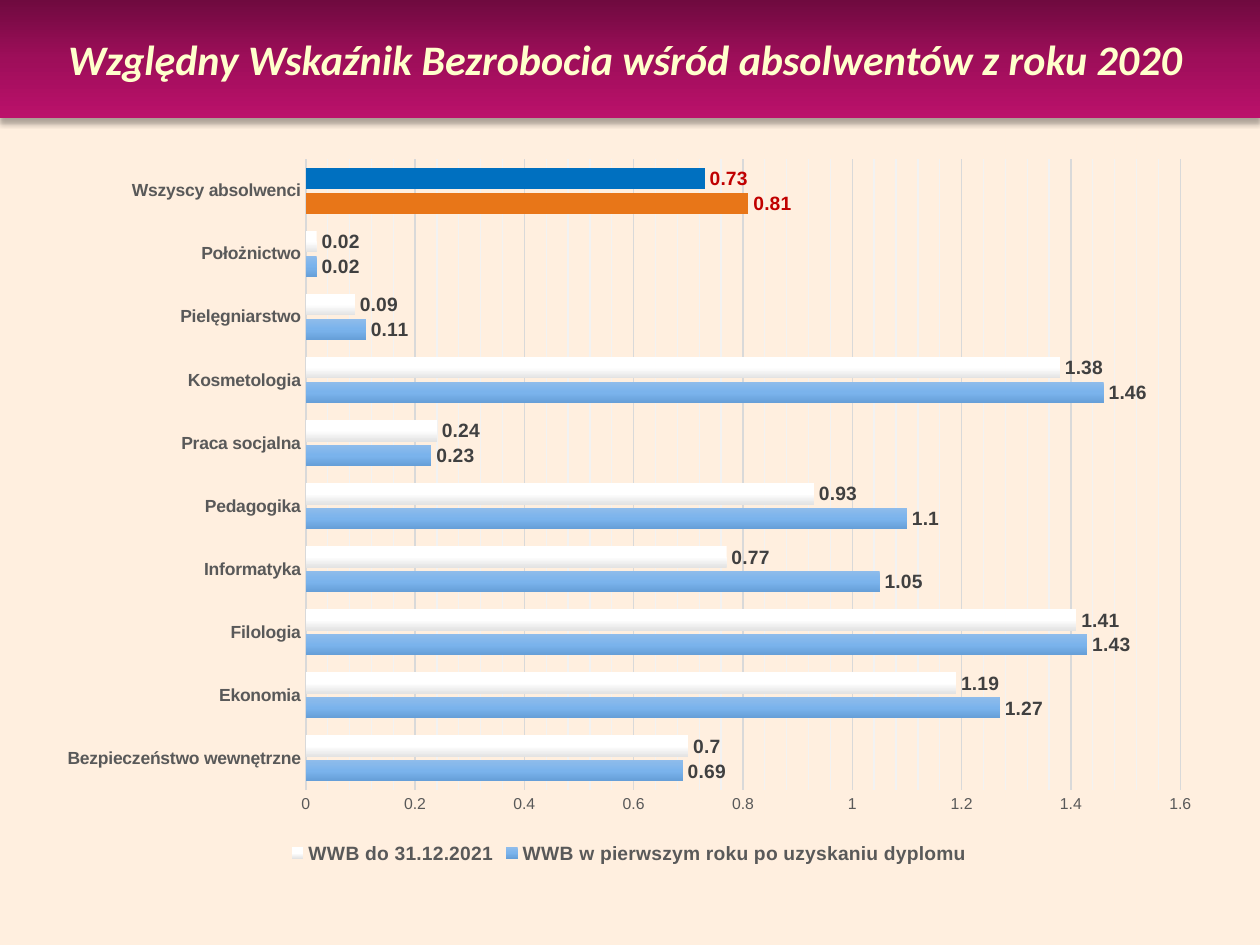
import copy

import pptx
import pptx.chart.data
import pptx.dml.color
import pptx.enum.chart
import pptx.enum.shapes
import pptx.enum.text
import pptx.oxml
import pptx.oxml.ns
import pptx.util
from pptx.util import Inches

COLORS = {
    "background": "FFEFDF",
    "title": "FFFFCC",
    "text": "595959",
    "label": "404040",
    "highlight": "C00000",
    "line": "D9D9D9",
    "minor line": "F2F2F2",
}
BANNER_GRADIENT = ("6F0A3F", "9E0E5A", "BB116B")
CATEGORIES = (
    "Bezpieczeństwo wewnętrzne", "Ekonomia", "Filologia", "Informatyka", "Pedagogika",
    "Praca socjalna", "Kosmetologia", "Pielęgniarstwo", "Położnictwo", "Wszyscy absolwenci",
)
SERIES = (
    ("WWB w pierwszym roku po uzyskaniu dyplomu",
     (0.69, 1.27, 1.43, 1.05, 1.1, 0.23, 1.46, 0.11, 0.02, 0.81),
     ("8FBCEB", "7AB3EC", "669FD8"), "E87618"),
    ("WWB do 31.12.2021",
     (0.7, 1.19, 1.41, 0.77, 0.93, 0.24, 1.38, 0.09, 0.02, 0.73),
     ("FFFFFF", "FFFFFF", "E3E3E3"), "0070C0"),
)


def rgb(value):
    return pptx.dml.color.RGBColor.from_string(value)


class SlideBuilder:
    """Holds the slide and its style, and adds each kind of element."""

    def __init__(self, slide):
        self.slide = slide
        self.colors = COLORS
        fill = slide.background.fill
        fill.solid()
        fill.fore_color.rgb = rgb(self.colors["background"])

    def set_font(self, font, size, color, name="Arial", bold=False, italic=False):
        font.name = name
        font.size = pptx.util.Pt(size)
        font.bold = bold
        font.italic = italic
        font.color.rgb = rgb(self.colors[color])

    def set_line(self, line, color, width):
        line.color.rgb = rgb(self.colors[color])
        line.width = pptx.util.Pt(width)

    def set_gradient(self, fill, element, colors):
        fill.gradient()
        fill.gradient_angle = 270
        stop_list = element.find(".//" + pptx.oxml.ns.qn("a:gsLst"))
        stop_list.insert(1, copy.deepcopy(stop_list[0]))
        for stop, color, position in zip(fill.gradient_stops, colors, (0, 0.5, 1)):
            stop.color.rgb = rgb(color)
            stop.position = position

    def add_banner(self, text, left, top, width, height):
        shape = self.slide.shapes.add_shape(
            pptx.enum.shapes.MSO_SHAPE.RECTANGLE, left, top, width, height)
        self.set_gradient(shape.fill, shape._element.spPr, BANNER_GRADIENT)
        shape.line.fill.background()
        shape.shadow.inherit = False
        effects = shape._element.spPr.find(pptx.oxml.ns.qn("a:effectLst"))
        effects.append(pptx.oxml.parse_xml(
            f'<a:outerShdw {pptx.oxml.ns.nsdecls("a")} blurRad="{pptx.util.Pt(3.5)}" '
            f'dist="{pptx.util.Pt(2.2)}" dir="5400000" rotWithShape="0">'
            '<a:srgbClr val="000000"><a:alpha val="32000"/></a:srgbClr></a:outerShdw>'))
        text_frame = shape.text_frame
        text_frame.word_wrap = True
        text_frame.vertical_anchor = pptx.enum.text.MSO_ANCHOR.MIDDLE
        text_frame.text = text
        paragraph = text_frame.paragraphs[0]
        paragraph.alignment = pptx.enum.text.PP_ALIGN.CENTER
        self.set_font(paragraph.runs[0].font, 24, "title", "Calibri", True, True)

    def add_bar_chart(self, left, top, width, height):
        data = pptx.chart.data.CategoryChartData()
        data.categories = CATEGORIES
        for name, values, *_ in SERIES:
            data.add_series(name, values)
        chart = self.slide.shapes.add_chart(
            pptx.enum.chart.XL_CHART_TYPE.BAR_CLUSTERED,
            left, top, width, height, data).chart
        chart.has_title = False
        self.set_font(chart.font, 10, "text")
        chart.has_legend = True
        chart.legend.position = pptx.enum.chart.XL_LEGEND_POSITION.BOTTOM
        chart.legend.include_in_layout = False
        self.set_font(chart.legend.font, 11, "text", bold=True)
        self.style_axes(chart)
        plot = chart.plots[0]
        plot.gap_width = 80
        plot.overlap = -17
        plot.vary_by_categories = False
        for series, (_, _, gradient, total_color) in zip(plot.series, SERIES):
            self.style_series(series, gradient, total_color)

    def style_axes(self, chart):
        for axis in (chart.category_axis, chart.value_axis):
            axis.major_tick_mark = pptx.enum.chart.XL_TICK_MARK.NONE
            axis.minor_tick_mark = pptx.enum.chart.XL_TICK_MARK.NONE
        self.set_font(chart.category_axis.tick_labels.font, 10, "text", bold=True)
        self.set_line(chart.category_axis.format.line, "line", 1)
        axis = chart.value_axis
        self.set_font(axis.tick_labels.font, 9, "text")
        axis.format.line.fill.background()
        axis.minimum_scale, axis.maximum_scale = 0, 1.6
        axis.major_unit, axis.minor_unit = 0.2, 0.04
        axis.has_major_gridlines = True
        axis.has_minor_gridlines = True
        self.set_line(axis.major_gridlines.format.line, "line", 0.75)
        minor_gridlines = axis._element.find(pptx.oxml.ns.qn("c:minorGridlines"))
        minor_gridlines.append(pptx.oxml.parse_xml(
            f'<c:spPr {pptx.oxml.ns.nsdecls("c", "a")}><a:ln w="{pptx.util.Pt(0.75)}">'
            f'<a:solidFill><a:srgbClr val="{self.colors["minor line"]}"/></a:solidFill>'
            '</a:ln></c:spPr>'))

    def style_series(self, series, gradient, total_color):
        outside_end = pptx.enum.chart.XL_LABEL_POSITION.OUTSIDE_END
        series.invert_if_negative = False
        self.set_gradient(series.format.fill, series._element, gradient)
        labels = series.data_labels
        labels.show_value = True
        labels.position = outside_end
        self.set_font(labels.font, 11, "label", bold=True)
        total = series.points[len(CATEGORIES) - 1]
        total.format.fill.solid()
        total.format.fill.fore_color.rgb = rgb(total_color)
        self.set_font(total.data_label.font, 11, "highlight", bold=True)
        total.data_label.position = outside_end


def main():
    presentation = pptx.Presentation()
    presentation.slide_width = Inches(10)
    presentation.slide_height = Inches(7.5)
    builder = SlideBuilder(presentation.slides.add_slide(presentation.slide_layouts[6]))
    builder.add_banner("Względny Wskaźnik Bezrobocia wśród absolwentów z roku 2020 ",
                       Inches(0), Inches(0), Inches(10), Inches(0.94))
    builder.add_bar_chart(Inches(0.35), Inches(1.15), Inches(9.29), Inches(5.75))
    presentation.save("out.pptx")


if __name__ == "__main__":
    main()
